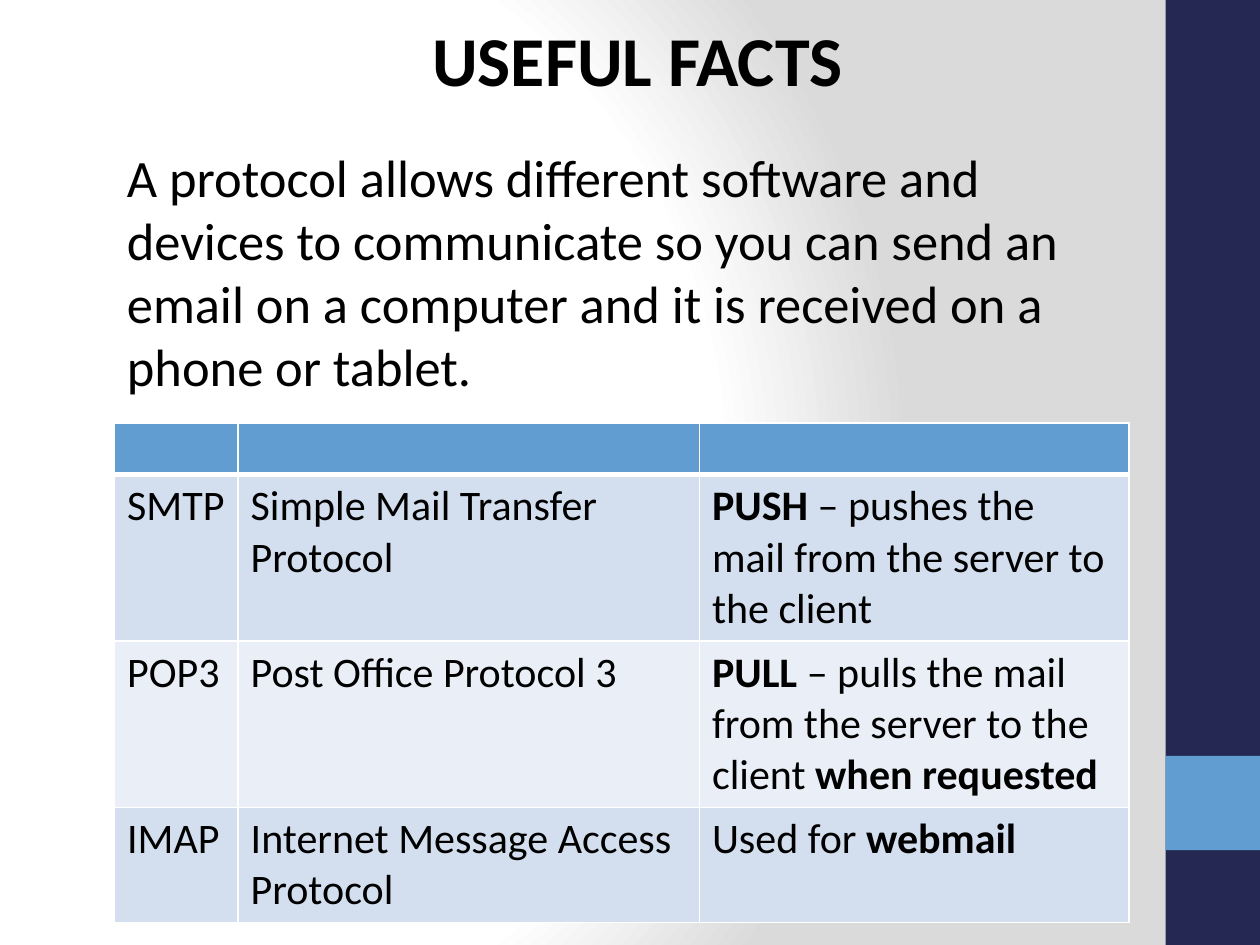
"""Build the slide on useful facts about e-mail protocols."""
from lxml import etree
from pptx import Presentation
from pptx.dml.color import RGBColor
from pptx.enum.shapes import MSO_SHAPE as Shape
from pptx.enum.text import MSO_ANCHOR as Anchor, MSO_AUTO_SIZE as AutoSize, PP_ALIGN as Align
from pptx.oxml import parse_xml
from pptx.oxml.ns import nsdecls, qn
from pptx.util import Cm, Pt

HEADING = "USEFUL FACTS"
EXPLANATION = ("A protocol allows different software and devices to communicate so you can "
               "send an email on a computer and it is received on a phone or tablet.")
PROTOCOLS = [
    ("", "", ""),
    ("SMTP", "Simple Mail Transfer Protocol",
     "**PUSH** – pushes the mail from the server to the client"),
    ("POP3", "Post Office Protocol 3",
     "**PULL** – pulls the mail from the server to the client **when requested**"),
    ("IMAP", "Internet Message Access Protocol", "Used for **webmail**"),
]
COLUMN_WIDTHS = (2.49, 9.3, 8.66)
ROW_HEIGHTS = (1.04, 3.3, 3.3, 2.29)
ROW_FILLS = ("629DD1", "D3DFEE", "EAEFF7", "D3DFEE")
SIDEBAR = [(0, 19.05, "242852"), (15.24, 1.9, "629DD1")]
LEFT, TEXT_WIDTH = 2.31, 21.08
BACKGROUND = f"""<a:gradFill {nsdecls('a')} rotWithShape="1"><a:gsLst>
<a:gs pos="0"><a:srgbClr val="FFFFFF"/></a:gs>
<a:gs pos="75000"><a:srgbClr val="FFFFFF"/></a:gs>
<a:gs pos="100000"><a:srgbClr val="DADADA"/></a:gs></a:gsLst>
<a:path path="circle"><a:fillToRect l="20000" t="50000" r="100000" b="50000"/></a:path>
</a:gradFill>"""


def paint(fill, colour):
    fill.solid()
    fill.fore_color.rgb = RGBColor.from_string(colour)


def write(paragraph, text, size, bold=False):
    """Write text in which ** switches bold on and off."""
    for index, part in enumerate(text.split("**")):
        if part:
            run = paragraph.add_run()
            run.text = part
            look = {"name": "Calibri", "size": Pt(size), "bold": bold or index % 2 == 1}
            for name, value in look.items():
                setattr(run.font, name, value)
            paint(run.font.fill, "000000")


def place_text(box, top, height, text, size, align, bold=False):
    place = {"left": LEFT, "top": top, "width": TEXT_WIDTH, "height": height}
    for name, value in place.items():
        setattr(box, name, Cm(value))
    frame = box.text_frame
    layout = {"word_wrap": True, "auto_size": AutoSize.NONE, "vertical_anchor": Anchor.TOP}
    for name, value in layout.items():
        setattr(frame, name, value)
    frame.paragraphs[0].alignment = align
    write(frame.paragraphs[0], text, size, bold)


def add_borders(cell, widths):
    properties = cell._tc.get_or_add_tcPr()
    for index, (side, width) in enumerate(widths.items()):
        properties.insert(index, parse_xml(
            f'<a:ln{side} {nsdecls("a")} w="{Pt(width)}"><a:solidFill>'
            f'<a:srgbClr val="FFFFFF"/></a:solidFill></a:ln{side}>'))


def add_sidebar(slide):
    for top, height, colour in SIDEBAR:
        band = slide.shapes.add_shape(Shape.RECTANGLE, Cm(23.5), Cm(top), Cm(1.9), Cm(height))
        band.shadow.inherit = False
        paint(band.fill, colour)
        band.line.fill.background()


def add_protocols(slide):
    table = slide.shapes.add_table(
        len(PROTOCOLS), len(COLUMN_WIDTHS), Cm(LEFT), Cm(8.53),
        Cm(sum(COLUMN_WIDTHS)), Cm(sum(ROW_HEIGHTS))).table
    for column, width in zip(table.columns, COLUMN_WIDTHS):
        column.width = Cm(width)
    for number, (row, height) in enumerate(zip(table.rows, ROW_HEIGHTS)):
        row.height = Cm(height)
        borders = {"L": 1, "R": 1, "T": 3 if number == 1 else 1, "B": 3 if number == 0 else 1}
        for cell, text in zip(row.cells, PROTOCOLS[number]):
            paint(cell.fill, ROW_FILLS[number])
            add_borders(cell, borders)
            write(cell.text_frame.paragraphs[0], text, 24)


def main():
    deck = Presentation()
    deck.slide_width, deck.slide_height = Cm(25.4), Cm(19.05)
    slide = deck.slides.add_slide(deck.slide_layouts[5])
    paint(slide.background.fill, "FFFFFF")
    solid = next(slide.element.iter(qn("a:solidFill")))
    solid.getparent().replace(solid, parse_xml(BACKGROUND))
    add_sidebar(slide)
    place_text(slide.shapes.title, 0.2, 2, HEADING, 40, Align.CENTER, True)
    explanation = slide.shapes.add_textbox(0, 0, 0, 0)
    place_text(explanation, 2.79, 5.4, EXPLANATION, 30, Align.LEFT)
    add_protocols(slide)
    deck.save("out.pptx")


if __name__ == "__main__":
    main()
